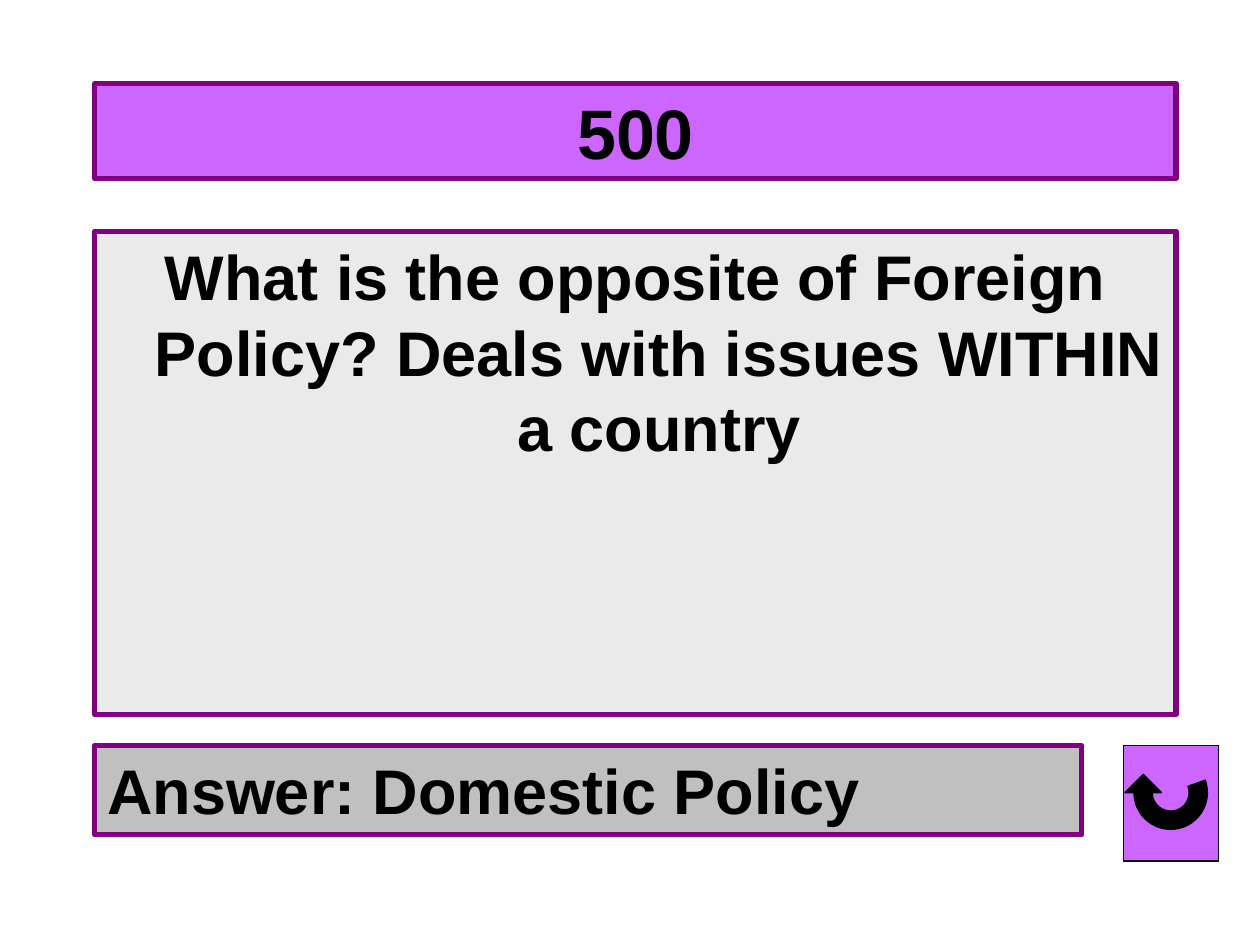
"""Build a quiz question slide with its answer and a return button."""
from math import cos, radians, sin

from lxml import etree
from pptx import Presentation
from pptx.dml.color import RGBColor
from pptx.enum.shapes import MSO_SHAPE
from pptx.enum.text import MSO_ANCHOR, MSO_AUTO_SIZE, PP_ALIGN
from pptx.oxml.ns import qn
from pptx.util import Cm, Pt

RECT = MSO_SHAPE.RECTANGLE
TOP, MIDDLE = MSO_ANCHOR.TOP, MSO_ANCHOR.MIDDLE
LEFT, CENTER = PP_ALIGN.LEFT, PP_ALIGN.CENTER
NO_FIT = MSO_AUTO_SIZE.NONE
BLACK = RGBColor(0x00, 0x00, 0x00)
PURPLE = RGBColor(0x80, 0x00, 0x80)
VIOLET = RGBColor(0xCC, 0x66, 0xFF)
PALE = RGBColor(0xEA, 0xEA, 0xEA)
GREY = RGBColor(0xC0, 0xC0, 0xC0)


def paint(s, fill, line=BLACK, width=0.75):
    s.fill.solid()
    s.fill.fore_color.rgb = fill
    s.line.color.rgb = line
    s.line.width = Pt(width)


def write(s, text, size=36, align=CENTER, anchor=TOP, hanging=0):
    tf = s.text_frame
    tf.word_wrap = True
    tf.auto_size = NO_FIT
    tf.vertical_anchor = anchor
    p = tf.paragraphs[0]
    p.alignment = align
    pPr = p._p.get_or_add_pPr()
    pPr.set("marL", str(Cm(hanging)))
    pPr.set("indent", str(-Cm(hanging)))
    etree.SubElement(pPr, qn("a:buNone"))
    p.space_before = Pt(0)
    r = p.add_run()
    r.text = text
    r.font.name = "Arial"
    r.font.size = Pt(size)
    r.font.bold = True
    r.font.color.rgb = BLACK


prs = Presentation()
prs.slide_width, prs.slide_height = Cm(25.4), Cm(19.05)
slide = prs.slides.add_slide(prs.slide_layouts[1])

title = slide.shapes.title
body = slide.placeholders[1]
answer = slide.shapes.add_shape(RECT, 0, 0, 0, 0)
answer.shadow.inherit = False
boxes = [
    (title, 1.69, 21.8, 1.91, VIOLET),
    (body, 4.66, 21.8, 9.74, PALE),
    (answer, 15.03, 19.9, 1.8, GREY),
]
for s, top, width, height, fill in boxes:
    s.left, s.top, s.width, s.height = Cm(1.91), Cm(top), Cm(width), Cm(height)
    paint(s, fill, PURPLE, 3)

write(title, "500", size=40, anchor=MIDDLE)
write(body, "What is the opposite of Foreign Policy? Deals with issues WITHIN a country", hanging=0.95)
write(answer, "Answer: Domestic Policy", align=LEFT)

button = slide.shapes.add_group_shape()
panel = button.shapes.add_shape(RECT, Cm(22.65), Cm(15.03), Cm(1.91), Cm(2.33))
panel.shadow.inherit = False
paint(panel, VIOLET)

cx, cy, outer, inner = 23.6, 15.98, 0.74, 0.37
angles = [radians(a) for a in range(-20, 181, 5)]
points = [(cx + outer * cos(a), cy + outer * sin(a)) for a in angles]
tip = cx - (outer + inner) / 2
points += [(tip - inner, cy), (tip, cy - inner), (tip + inner, cy)]
points += [(cx + inner * cos(a), cy + inner * sin(a)) for a in reversed(angles)]
points = [(Cm(x), Cm(y)) for x, y in points]
builder = button.shapes.build_freeform(*points[0])
builder.add_line_segments(points[1:])
arrow = builder.convert_to_shape()
arrow.shadow.inherit = False
paint(arrow, BLACK)

prs.save("out.pptx")
